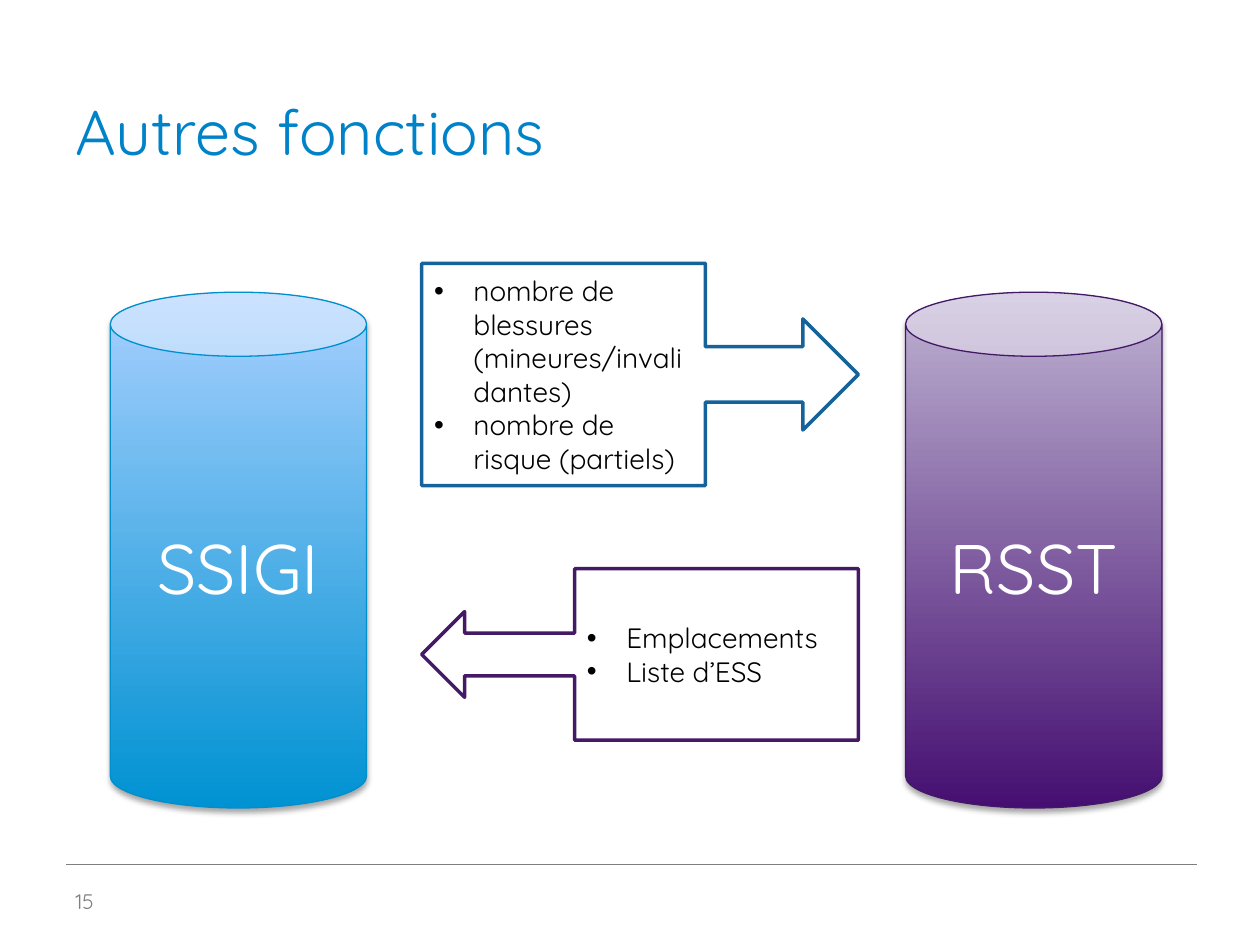
from dataclasses import dataclass
from lxml.etree import SubElement as Sub
from pptx import Presentation
from pptx.dml.color import RGBColor as Rgb
from pptx.enum.shapes import MSO_CONNECTOR as Conn, MSO_SHAPE as Kind
from pptx.enum.text import MSO_ANCHOR as Anchor, PP_ALIGN as Align
from pptx.oxml.ns import qn
from pptx.util import Pt


@dataclass(frozen=True)
class Theme:
    font: str = "Quicksand"
    title: int = 36
    label: int = 40
    body: int = 16
    foot: int = 12
    head: str = "0082C9"
    gray: str = "7F7F7F"
    white: str = "FFFFFF"
    black: str = "000000"
    blue: tuple = ("0092D2", "A8D0FF", "008FCD")
    plum: tuple = ("450F71", "BEB2D2", "431866")
    navy: str = "16629B"
    grape: str = "441A66"


T = Theme()


def hue(code):
    return Rgb.from_string(code)


def add_dot(para):
    props = para._p.get_or_add_pPr()
    props.set("marL", str(Pt(22.5)))
    props.set("indent", str(-Pt(22.5)))
    Sub(props, qn("a:buFont"), typeface="Arial")
    Sub(props, qn("a:buChar"), char="•")


def write(shape, *lines, size, color, align=Align.LEFT, anchor=Anchor.MIDDLE, dots=False):
    frame = shape.text_frame
    frame.word_wrap = True
    frame.vertical_anchor = anchor
    frame.text = "\n".join(lines)
    for para in frame.paragraphs:
        para.alignment = align
        if dots:
            add_dot(para)
        for run in para.runs:
            run.font.name = T.font
            run.font.size = Pt(size)
            run.font.color.rgb = hue(color)


def add_box(slide, box, text, **form):
    write(slide.shapes.add_textbox(*map(Pt, box)), text, **form)


def add_form(slide, kind, box, edge, width):
    shape = slide.shapes.add_shape(kind, *map(Pt, box))
    shape.shadow.inherit = False
    shape.line.color.rgb = hue(edge)
    shape.line.width = Pt(width)
    return shape


def add_shade(shape):
    effect = shape._element.spPr.find(qn("a:effectLst"))
    shade = Sub(effect, qn("a:outerShdw"), blurRad=str(Pt(3.1)), dist=str(Pt(1.8)),
                dir="5400000", rotWithShape="0")
    color = Sub(shade, qn("a:srgbClr"), val=T.black)
    Sub(color, qn("a:alpha"), val="35000")


def add_can(slide, left, name, tones):
    low, high, edge = tones
    can = add_form(slide, Kind.CAN, (left, 167, 146.5, 294.75), edge, 0.75)
    can.fill.gradient()
    can.fill.gradient_angle = 90
    for stop, tone in zip(can.fill.gradient_stops, (low, high)):
        stop.color.rgb = hue(tone)
    add_shade(can)
    write(can, name, size=T.label, color=T.white, align=Align.CENTER)


def add_call(slide, kind, top, height, edge, *lines):
    call = add_form(slide, kind, (241, top, 249.5, height), edge, 2)
    call.fill.solid()
    call.fill.fore_color.rgb = hue(T.white)
    write(call, *lines, size=T.body, color=T.black, dots=True)


def add_rule(slide):
    rule = slide.shapes.add_connector(Conn.STRAIGHT, Pt(38), Pt(494), Pt(684), Pt(494))
    rule.line.color.rgb = hue(T.gray)
    rule.line.width = Pt(0.25)
    Sub(rule._element.spPr, qn("a:effectLst"))


def main():
    deck = Presentation()
    deck.slide_width, deck.slide_height = Pt(720), Pt(540)
    slide = deck.slides.add_slide(deck.slide_layouts[6])
    add_rule(slide)
    add_box(slide, (36, 21.6, 648, 77.8), "Autres fonctions",
            size=T.title, color=T.head, anchor=Anchor.BOTTOM)
    add_box(slide, (36, 500.5, 77, 28.75), "15", size=T.foot, color=T.gray)
    add_can(slide, 63, "SSIGI", T.blue)
    add_can(slide, 517.5, "RSST", T.plum)
    add_call(slide, Kind.RIGHT_ARROW_CALLOUT, 150.5, 127, T.navy,
             "nombre de blessures (mineures/invalidantes)", "nombre de risque (partiels)")
    add_call(slide, Kind.LEFT_ARROW_CALLOUT, 325, 98, T.grape, "Emplacements", "Liste d’ESS")
    deck.save("out.pptx")


if __name__ == "__main__":
    main()
